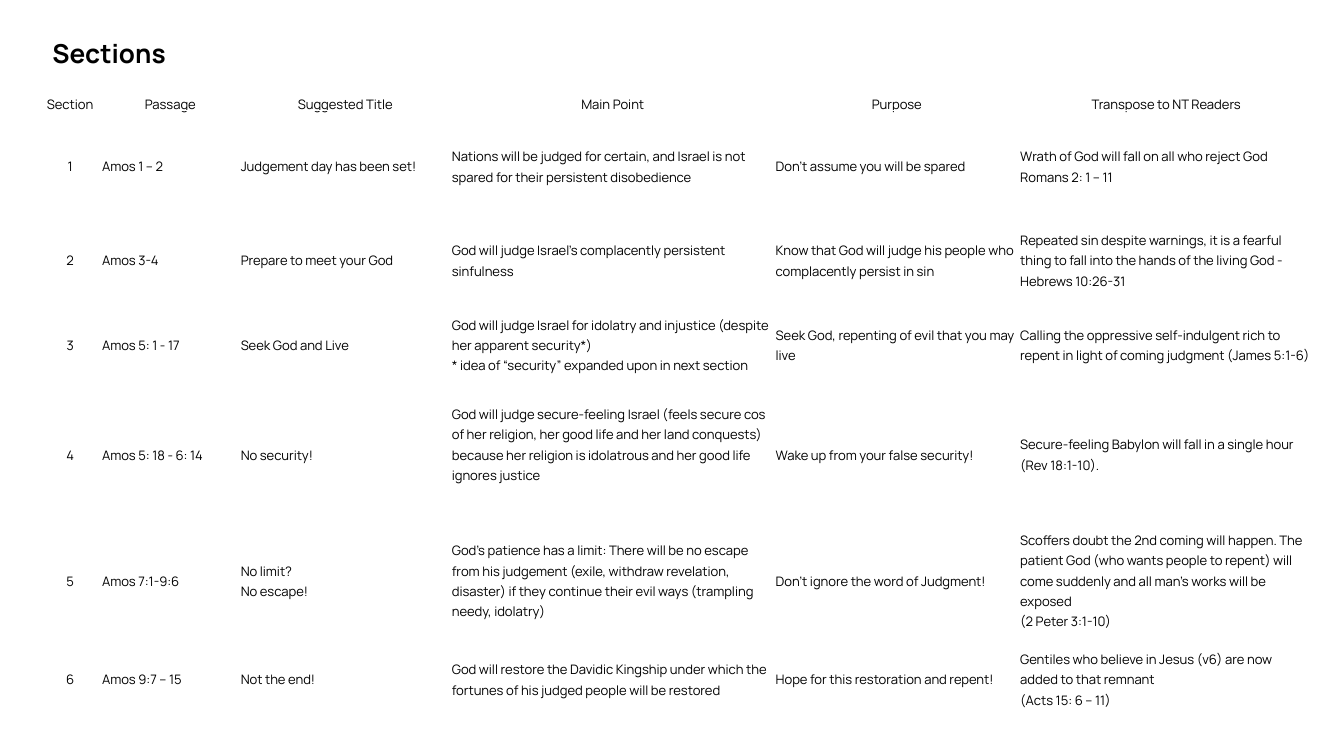
from pptx import Presentation
from pptx.dml.color import RGBColor as Rgb
from pptx.enum.text import MSO_ANCHOR as Anchor, PP_ALIGN as Align
from pptx.util import Cm, Pt

COLORS = {"text": "000000"}
FONTS = {
    "title": {"name": "Manrope", "size": Pt(14), "bold": True},
    "cell": {"name": "Manrope", "size": Pt(7), "bold": False},
}
TITLE_FRAME = {"word_wrap": True, "margin_left": Cm(0.25), "margin_right": Cm(0.25),
               "margin_top": Cm(0.25), "margin_bottom": Cm(0.25)}
CELL_FORMAT = {"vertical_anchor": Anchor.MIDDLE, "margin_left": Cm(0.02),
               "margin_right": Cm(0.02), "margin_top": 0, "margin_bottom": 0}
PLAIN_TABLE = {"first_row": False, "horz_banding": False}
COLUMN_WIDTHS = [1.17, 2.62, 3.99, 6.12, 4.62, 5.56]
ROW_HEIGHTS = [0.18, 2.08, 1.47, 1.73, 2.41, 2.36, 1.37]
RAISED_CELLS = {(4, 3): Cm(0.38)}

SECTIONS = [
    ["Section", "Passage", "Suggested Title", "Main Point", "Purpose",
     "Transpose to NT Readers"],
    ["1", "Amos 1 – 2", "Judgement day has been set!",
     "Nations will be judged for certain, and Israel is not spared for their "
     "persistent disobedience",
     "Don’t assume you will be spared",
     "Wrath of God will fall on all who reject God\nRomans 2: 1 – 11"],
    ["2", "Amos 3-4", "Prepare to meet your God",
     "God will judge Israel’s complacently persistent sinfulness",
     "Know that God will judge his people who complacently persist in sin",
     "Repeated sin despite warnings, it is a fearful thing to fall into the hands "
     "of the living God - Hebrews 10:26-31"],
    ["3", "Amos 5: 1 - 17", "Seek God and Live",
     "God will judge Israel for idolatry and injustice (despite her apparent "
     "security*)\n* idea of “security” expanded upon in next section",
     "Seek God, repenting of evil that you may live",
     "Calling the oppressive self-indulgent rich to repent in light of coming "
     "judgment (James 5:1-6)"],
    ["4", "Amos 5: 18 - 6: 14", "No security!",
     "God will judge secure-feeling Israel (feels secure cos of her religion, her "
     "good life and her land conquests) because her religion is idolatrous and her "
     "good life ignores justice",
     "Wake up from your false security!",
     "Secure-feeling Babylon will fall in a single hour (Rev 18:1-10)."],
    ["5", "Amos 7:1-9:6", "No limit?\nNo escape!",
     "God’s patience has a limit: There will be no escape from his judgement "
     "(exile, withdraw revelation, disaster) if they continue their evil ways "
     "(trampling needy, idolatry)",
     "Don’t ignore the word of Judgment!",
     "Scoffers doubt the 2nd coming will happen. The patient God (who wants people "
     "to repent) will come suddenly and all man’s works will be exposed\n"
     "(2 Peter 3:1-10)"],
    ["6", "Amos 9:7 – 15", "Not the end!",
     "God will restore the Davidic Kingship under which the fortunes of his judged "
     "people will be restored",
     "Hope for this restoration and repent!",
     "Gentiles who believe in Jesus (v6) are now added to that remnant\n"
     "(Acts 15: 6 – 11)"],
]


def apply_format(target, values):
    for key, value in values.items():
        setattr(target, key, value)


class SectionSlide:
    """Holds the text style and the slide being filled."""

    def __init__(self, slide, fonts, colors):
        self.slide, self.fonts, self.colors = slide, fonts, colors

    def fill_text(self, frame, words, style, **layout):
        frame.text = words
        for paragraph in frame.paragraphs:
            apply_format(paragraph, layout)
            for run in paragraph.runs:
                apply_format(run.font, self.fonts[style])
                run.font.color.rgb = Rgb.from_string(self.colors["text"])

    def title(self, words, *box):
        heading = self.slide.shapes.add_textbox(*map(Cm, box))
        apply_format(heading.text_frame, TITLE_FRAME)
        self.fill_text(heading.text_frame, words, "title")

    def table(self, rows, left, top, widths, heights):
        box = map(Cm, (left, top, sum(widths), sum(heights)))
        overview = self.slide.shapes.add_table(len(rows), len(widths), *box).table
        apply_format(overview, PLAIN_TABLE)
        for column, width in zip(overview.columns, widths):
            column.width = Cm(width)
        for row, height in zip(overview.rows, heights):
            row.height = Cm(height)
        for r, entries in enumerate(rows):
            for c, words in enumerate(entries):
                cell = overview.cell(r, c)
                cell.fill.background()
                apply_format(cell, CELL_FORMAT)
                cell.margin_bottom = RAISED_CELLS.get((r, c), 0)
                align = Align.CENTER if r == 0 or c == 0 else Align.LEFT
                self.fill_text(cell.text_frame, words, "cell",
                               alignment=align, line_spacing=1.15)


def main():
    deck = Presentation()
    deck.slide_width, deck.slide_height = Cm(25.4), Cm(14.29)
    page = SectionSlide(deck.slides.add_slide(deck.slide_layouts[6]), FONTS, COLORS)
    page.title("Sections", 0.74, 0.46, 23.67, 1.78)
    page.table(SECTIONS, 0.74, 1.75, COLUMN_WIDTHS, ROW_HEIGHTS)
    deck.save("out.pptx")


if __name__ == "__main__":
    main()
